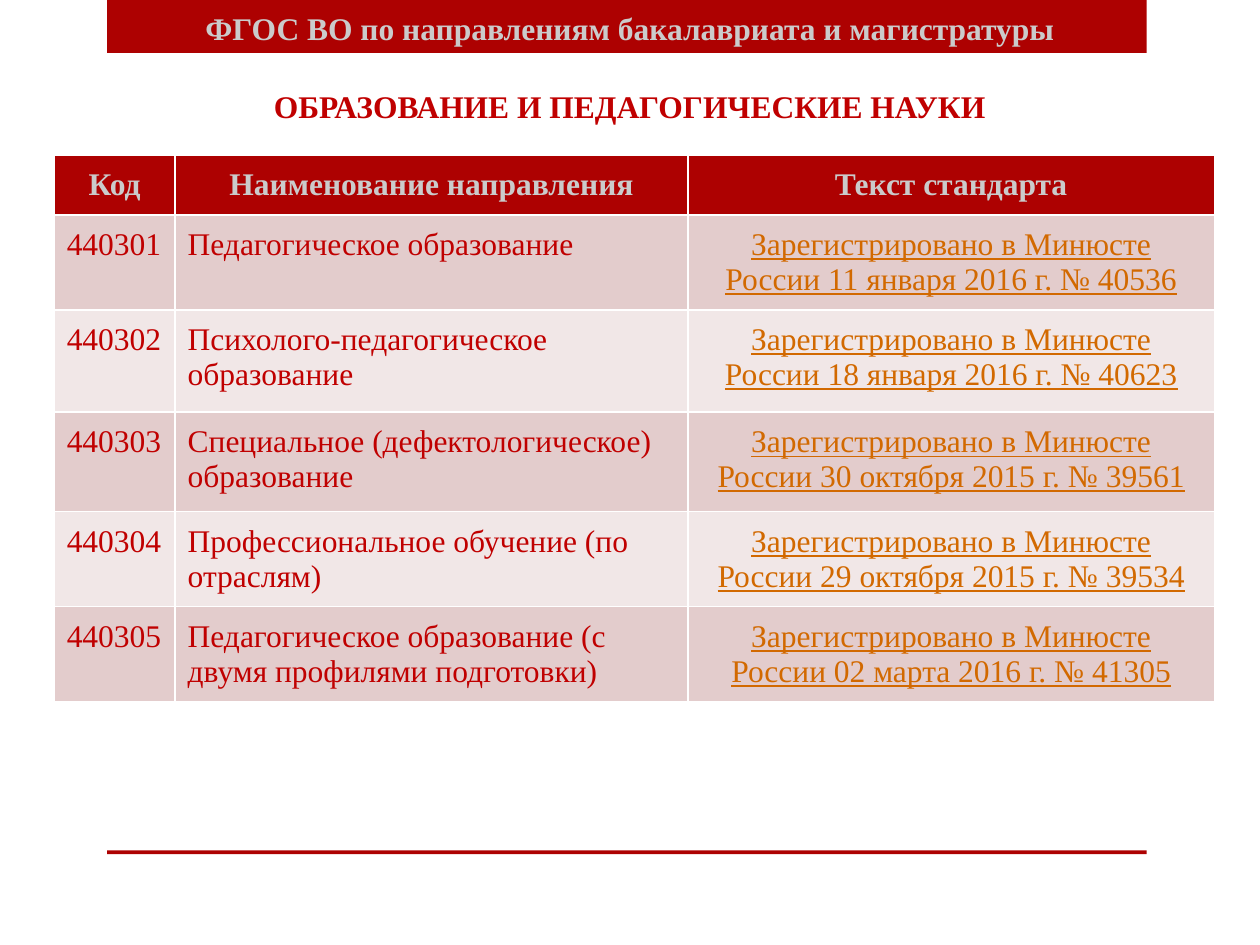
from pptx import Presentation
from pptx.dml.color import RGBColor
from pptx.enum.shapes import MSO_SHAPE
from pptx.enum.text import PP_ALIGN
from pptx.util import Inches, Pt

RECT = MSO_SHAPE.RECTANGLE
LEFT, CENTER = PP_ALIGN.LEFT, PP_ALIGN.CENTER

WIDTH, HEIGHT = 10, 7.5
FONT = "Times New Roman"
COLORS = {
    "band": "AD0101",
    "light": "CBCBCB",
    "text": "C00000",
    "link": "D26900",
    "odd": "E3CCCC",
    "even": "F1E7E7",
}
COLS = [0.96, 4.07, 4.18]
ROWS = [0.39, 0.67, 0.81, 0.79, 0.69, 0.75]
HEADER = ["Код", "Наименование направления", "Текст стандарта"]
PROGRAMS = [
    ("Педагогическое образование", "11 января 2016 г. № 40536"),
    ("Психолого-педагогическое образование", "18 января 2016 г. № 40623"),
    ("Специальное (дефектологическое) образование", "30 октября 2015 г. № 39561"),
    ("Профессиональное обучение (по отраслям)", "29 октября 2015 г. № 39534"),
    ("Педагогическое образование (с двумя профилями подготовки)",
     "02 марта 2016 г. № 41305"),
]


def rgb(name):
    return RGBColor.from_string(COLORS[name])


def write(p, text, color="text", bold=False, underline=False, align=LEFT):
    p.alignment = align
    r = p.add_run()
    r.text = text
    r.font.name = FONT
    r.font.size = Pt(18)
    r.font.bold = bold
    r.font.underline = underline
    r.font.color.rgb = rgb(color)


def add_band(s, box):
    sp = s.shapes.add_shape(RECT, *map(Inches, box))
    sp.shadow.inherit = False
    sp.fill.solid()
    sp.fill.fore_color.rgb = rgb("band")
    sp.line.fill.background()


def add_heading(s, box):
    tf = s.shapes.add_textbox(*map(Inches, box)).text_frame
    tf.word_wrap = True
    tf.margin_top = Inches(0.07)
    write(tf.paragraphs[0], "ФГОС ВО по направлениям бакалавриата и магистратуры",
          color="light", bold=True, align=CENTER)
    p = tf.add_paragraph()
    p.space_before = Pt(23)
    write(p, "ОБРАЗОВАНИЕ И ПЕДАГОГИЧЕСКИЕ НАУКИ", bold=True, align=CENTER)


def fill_cell(cell, text, fill, **fmt):
    cell.margin_left = cell.margin_right = Inches(0.1)
    cell.margin_top = cell.margin_bottom = Inches(0.1)
    cell.fill.solid()
    cell.fill.fore_color.rgb = rgb(fill)
    write(cell.text_frame.paragraphs[0], text, **fmt)


def add_standards(s, box):
    table = s.shapes.add_table(len(ROWS), len(COLS), *map(Inches, box)).table
    for col, width in zip(table.columns, COLS):
        col.width = Inches(width)
    for row, height in zip(table.rows, ROWS):
        row.height = Inches(height)
    for j, text in enumerate(HEADER):
        fill_cell(table.cell(0, j), text, "band", color="light", bold=True, align=CENTER)
    for i, (name, registered) in enumerate(PROGRAMS, 1):
        fill = "odd" if i % 2 else "even"
        fill_cell(table.cell(i, 0), str(440300 + i), fill)
        fill_cell(table.cell(i, 1), name, fill)
        fill_cell(table.cell(i, 2), f"Зарегистрировано в Минюсте России {registered}",
                  fill, color="link", underline=True, align=CENTER)


def main():
    prs = Presentation()
    prs.slide_width, prs.slide_height = Inches(WIDTH), Inches(HEIGHT)
    s = prs.slides.add_slide(prs.slide_layouts[6])
    band_left, band_width = 0.085 * WIDTH, 0.825 * WIDTH
    add_band(s, (band_left, 0, band_width, 0.42))
    add_band(s, (band_left, 0.9 * HEIGHT, band_width, 0.03))
    add_standards(s, (0.43, 1.23, sum(COLS), sum(ROWS)))
    add_heading(s, (0.67, 0, WIDTH - 2 * 0.67, 0.92))
    prs.save("out.pptx")


if __name__ == "__main__":
    main()
